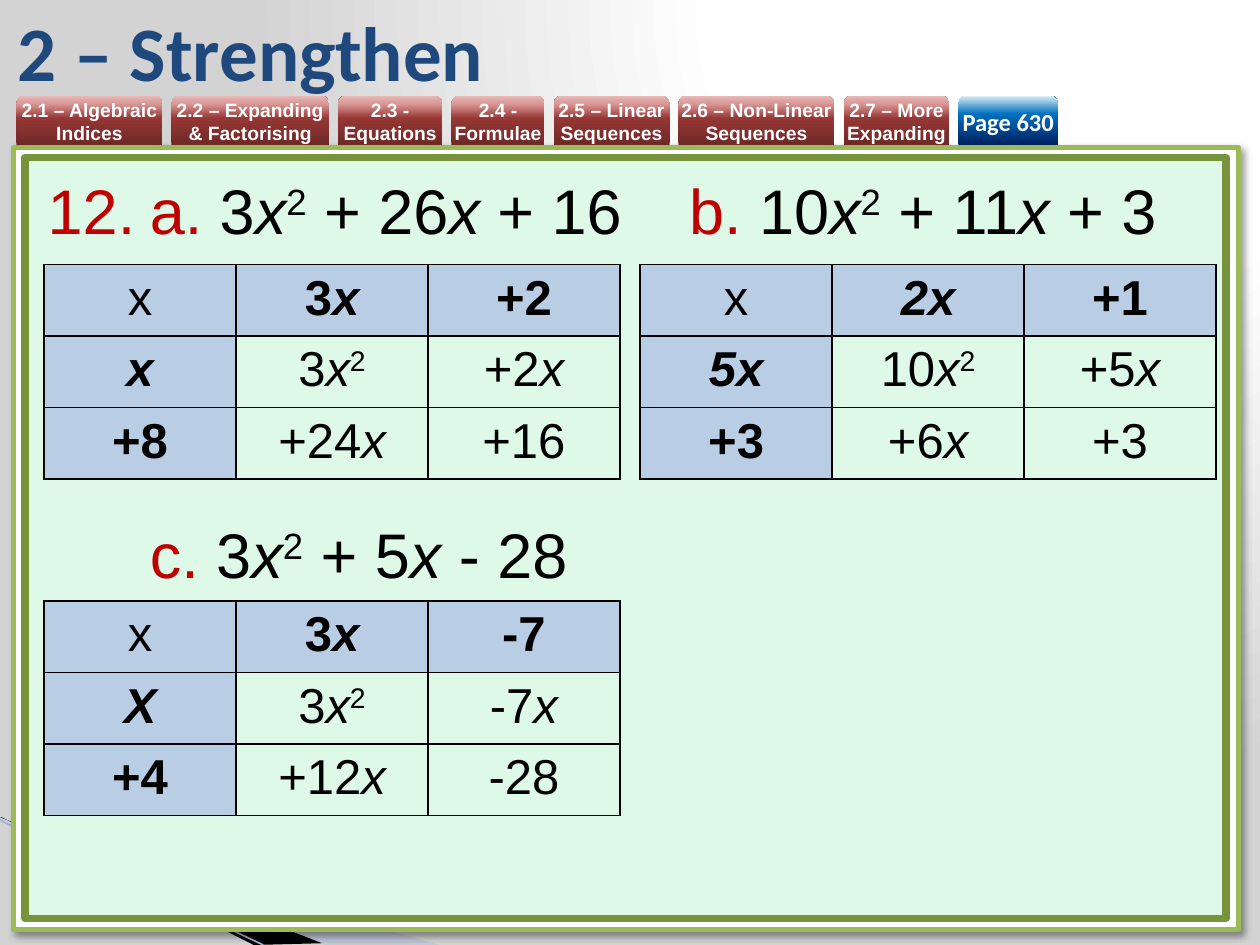
from dataclasses import dataclass
from lxml import etree
from pptx import Presentation
from pptx import util as u
from pptx.dml.color import RGBColor
from pptx.enum import shapes, text
from pptx.oxml import parse_xml

NS = "http://schemas.openxmlformats.org/drawingml/2006/main"
Pt = u.Pt


@dataclass(frozen=True)
class Theme:
    head: str = "Calibri"
    body: str = "Arial"
    ink: str = "000000"
    white: str = "FFFFFF"
    navy: str = "1F497D"
    red: str = "C00000"
    mint: str = "DFF9E8"
    olive: str = "77933C"
    lime: str = "9BBB59"
    cell: str = "B9CDE5"
    mist: str = "A7B9DB"
    steel: str = "9EB3D6"
    brick: tuple = ((0, "6F2927"), (54, "953735"), (83, "D99694"), (100, "E6B9B8"))
    sea: tuple = ((0, "002060"), (63, "0070C0"), (100, "DBEEF4"))
    fog: tuple = ((0, "FFFFFF"), (40, "FFFFFF"), (100, "D3D3D3"))
    title: float = 44
    sum: float = 36
    grid: float = 28
    page: float = 14
    tab: float = 11


@dataclass(frozen=True)
class Tab:
    label: str
    width: float


@dataclass(frozen=True)
class Grid:
    left: float
    top: float
    rows: tuple


T = Theme()
TABS = (
    Tab("2.1 – Algebraic Indices", 83.5),
    Tab("2.2 – Expanding & Factorising", 90),
    Tab("2.3 - Equations", 59.8),
    Tab("2.4 - Formulae", 53.3),
    Tab("2.5 – Linear Sequences", 66.2),
    Tab("2.6 – Non-Linear Sequences", 89.3),
    Tab("2.7 – More Expanding", 60.5),
    Tab("Page 630", 56.9),
)
GRIDS = (
    Grid(25.2, 151.2, (("x", "3_x_", "+2"), ("_x_", "3_x_^2^", "+2_x_"), ("+8", "+24_x_", "+16"))),
    Grid(365.8, 151.2, (("x", "_2x_", "+1"), ("_5x_", "10_x_^2^", "+5_x_"), ("+3", "+6_x_", "+3"))),
    Grid(25.2, 343.4, (("x", "3_x_", "-7"), ("_X_", "3_x_^2^", "-7_x_"), ("+4", "+12_x_", "-28"))),
)


def rgb(code: str) -> RGBColor:
    return RGBColor.from_string(code)


def node(xml: str):
    return parse_xml(xml.replace(">", f' xmlns:a="{NS}">', 1))


def blend(stops: tuple, way: str):
    marks = "".join(f'<a:gs pos="{p * 1000}"><a:srgbClr val="{c}"/></a:gs>' for p, c in stops)
    return node(f'<a:gradFill rotWithShape="1"><a:gsLst>{marks}</a:gsLst>{way}</a:gradFill>')


def swap(fill_host, fill, new) -> None:
    fill.solid()
    old = fill_host.find(f"{{{NS}}}solidFill")
    fill_host.replace(old, new)


def style(font, name: str, size: float, color: str, bold: bool = False) -> None:
    font.name, font.size, font.bold = name, Pt(size), bold
    font.color.rgb = rgb(color)


def write(para, code: str, size: float, bold: bool = False) -> None:
    state = {"_": False, "^": False, "~": False}
    part = ""
    for char in code + "_":
        if char not in state:
            part += char
            continue
        if part:
            run = para.add_run()
            run.text = part
            style(run.font, T.body, size, T.red if state["~"] else T.ink, bold)
            run.font.italic = state["_"]
            if state["^"]:
                run.font._element.set("baseline", "30000")
        part = ""
        state[char] = not state[char]


def panel(slide, box: tuple, fill: str, line: str, width: float):
    shape = slide.shapes.add_shape(shapes.MSO_SHAPE.RECTANGLE, *map(Pt, box))
    shape.shadow.inherit = False
    shape.fill.solid()
    shape.fill.fore_color.rgb = rgb(fill)
    shape.line.color.rgb = rgb(line)
    shape.line.width = Pt(width)
    return shape


def wedge(slide, points: tuple, color: str, alpha: int) -> None:
    path = slide.shapes.build_freeform(*points[0], scale=Pt(1))
    path.add_line_segments(points[1:], close=True)
    shape = path.convert_to_shape()
    shape.shadow.inherit = False
    shape.line.fill.background()
    shape.fill.solid()
    shape.fill.fore_color.rgb = rgb(color)
    tint = shape._element.spPr.find(f".//{{{NS}}}srgbClr")
    etree.SubElement(tint, f"{{{NS}}}alpha", val=str(alpha * 1000))


def draw_tabs(slide) -> None:
    left = 9.4
    for tab in TABS:
        last = tab is TABS[-1]
        shape = slide.shapes.add_shape(
            shapes.MSO_SHAPE.ROUND_2_SAME_RECTANGLE, Pt(left), Pt(54.7), Pt(tab.width), Pt(28.1))
        shape.shadow.inherit = False
        shape.line.fill.background()
        swap(shape._element.spPr, shape.fill,
             blend(T.sea if last else T.brick, '<a:lin ang="16200000" scaled="0"/>'))
        frame = shape.text_frame
        frame.margin_left = frame.margin_right = frame.margin_top = frame.margin_bottom = 0
        frame.vertical_anchor = text.MSO_ANCHOR.MIDDLE
        frame.text = tab.label
        para = frame.paragraphs[0]
        para.alignment = text.PP_ALIGN.CENTER
        style(para.runs[0].font, T.head if last else T.body, T.page if last else T.tab, T.white, True)
        left += tab.width + 5.1


def draw_sum(slide, left: float, top: float, width: float, code: str):
    box = slide.shapes.add_textbox(Pt(left), Pt(top), Pt(width), Pt(48.6))
    box.text_frame.word_wrap = True
    para = box.text_frame.paragraphs[0]
    write(para, code, T.sum)
    return para


def draw_grid(slide, grid: Grid) -> None:
    table = slide.shapes.add_table(3, 3, Pt(grid.left), Pt(grid.top), Pt(329.1), Pt(122.4)).table
    table.first_row = table.horz_banding = False
    for col in table.columns:
        col.width = Pt(109.7)
    for r, row in enumerate(grid.rows):
        for c, code in enumerate(row):
            cell = table.cell(r, c)
            head = r == 0 or c == 0
            para = cell.text_frame.paragraphs[0]
            para.alignment = text.PP_ALIGN.CENTER
            write(para, code, T.grid, head and r + c > 0)
            props = cell._tc.get_or_add_tcPr()
            for side in "LRTB":
                props.append(node(f'<a:ln{side} w="12700"><a:solidFill><a:srgbClr val="{T.ink}"/>'
                                  f'</a:solidFill></a:ln{side}>'))
            if head:
                cell.fill.solid()
                cell.fill.fore_color.rgb = rgb(T.cell)
            else:
                cell.fill.background()


def main() -> None:
    deck = Presentation()
    deck.slide_width, deck.slide_height = Pt(720), Pt(540)
    slide = deck.slides.add_slide(deck.slide_layouts[5])
    back = slide.background.fill
    back.solid()
    old = slide._element.find(f".//{{{NS}}}solidFill")
    old.getparent().replace(old, blend(
        T.fog, '<a:path path="circle"><a:fillToRect l="65000" t="0" r="0" b="98000"/></a:path>'))

    wedge(slide, ((0, 468), (251.3, 540), (186.5, 540), (0, 467.3)), T.mist, 40)
    wedge(slide, ((0, 466.6), (184.3, 539.3), (145.4, 540), (0.7, 467.3)), T.ink, 100)
    edge = slide.shapes.add_connector(
        shapes.MSO_CONNECTOR.STRAIGHT, Pt(0), Pt(468.7), Pt(150.5), Pt(540))
    edge.line.color.rgb = rgb(T.steel)
    edge.line.width = Pt(0.95)
    etree.SubElement(edge._element.spPr, f"{{{NS}}}effectLst")

    frame = panel(slide, (7.9, 84.2, 699.8, 447.1), T.white, T.lime, 3)
    glow = frame._element.spPr.find(f"{{{NS}}}effectLst")
    glow.append(node('<a:outerShdw blurRad="50800" dist="38100" dir="2700000" algn="tl" rotWithShape="0">'
                     f'<a:srgbClr val="{T.ink}"><a:alpha val="40000"/></a:srgbClr></a:outerShdw>'))
    panel(slide, (14.4, 90, 686.2, 434.9), T.mint, T.olive, 4.33)
    draw_tabs(slide)

    title = slide.shapes.title
    title.left, title.top, title.width, title.height = map(Pt, (2.9, 3.6, 607, 51.1))
    title.text_frame.text = "2 – Strengthen"
    title.text_frame.auto_size = text.MSO_AUTO_SIZE.NONE
    title.text_frame.vertical_anchor = text.MSO_ANCHOR.MIDDLE
    para = title.text_frame.paragraphs[0]
    para.alignment = text.PP_ALIGN.LEFT
    style(para.runs[0].font, T.head, T.title, T.navy, True)

    lead = draw_sum(slide, 20.2, 94.3, 674.6,
                    "~a.~ 3_x_^2^ + 26_x_ + 16\t~b.~ 10_x_^2^ + 11_x_ + 3")
    props = lead._p.get_or_add_pPr()
    props.set("marL", str(Pt(58.3)))
    props.set("indent", str(-Pt(58.3)))
    for xml in (f'<a:buClr><a:srgbClr val="{T.red}"/></a:buClr>',
                '<a:buAutoNum type="arabicPeriod" startAt="12"></a:buAutoNum>',
                f'<a:tabLst><a:tab pos="{Pt(366.5)}" algn="l"/></a:tabLst>'):
        props.append(node(xml))
    draw_sum(slide, 78.5, 290.9, 300, "~c.~ 3_x_^2^ + 5_x_ - 28")
    for grid in GRIDS:
        draw_grid(slide, grid)
    deck.save("out.pptx")


if __name__ == "__main__":
    main()
